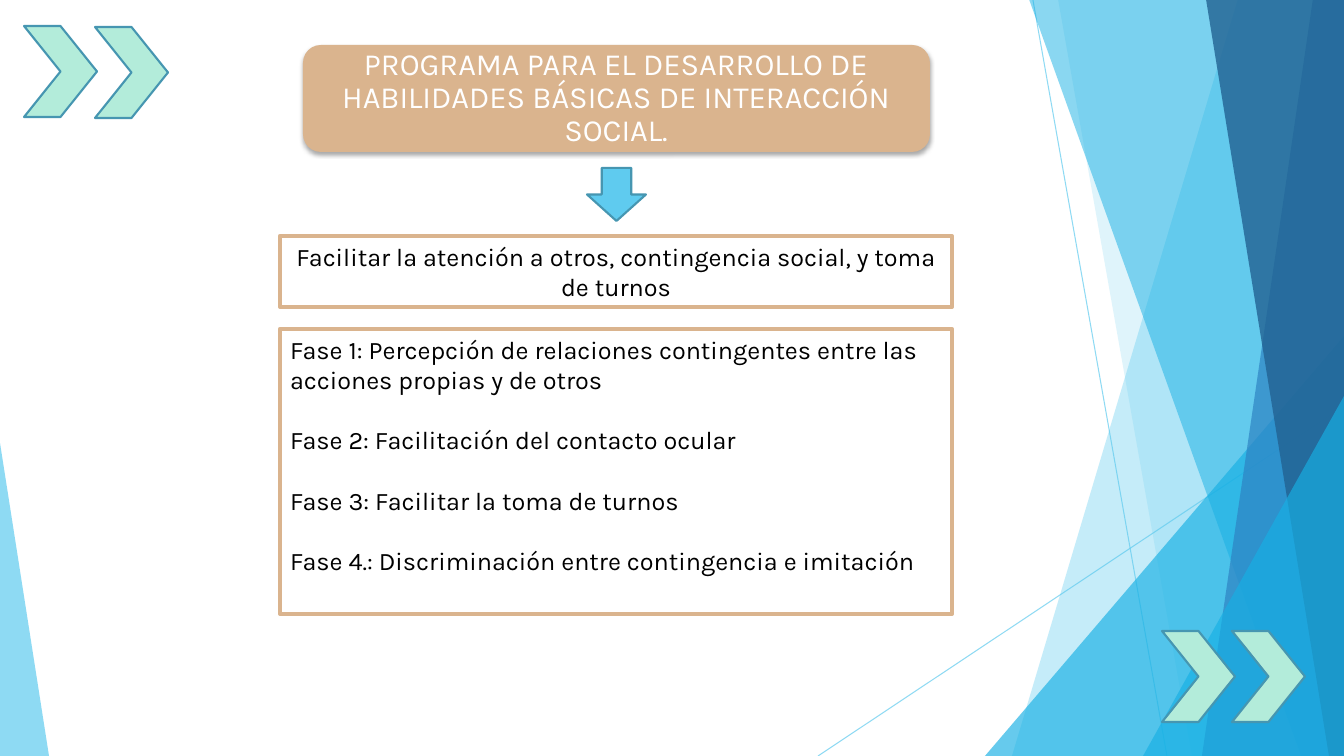
"""Build the slide on a programme for basic social interaction skills."""
from lxml import etree
from pptx import Presentation
from pptx.dml.color import RGBColor
from pptx.enum import shapes, text
from pptx.oxml import parse_xml
from pptx.oxml.ns import nsdecls, qn
from pptx.util import Pt

SCALE = 914400 / 100.8
WIDTH, HEIGHT = 1344, 756
FONT = "Karla"
COLORS = {
    "sky": "5FCBEF", "cyan": "17B0E4", "blue": "2E83C3", "navy": "226292",
    "mint": "B3ECDA", "teal": "4696B1", "sand": "DAB48E",
    "white": "FFFFFF", "black": "000000",
}


def px(*lengths):
    return [round(length * SCALE) for length in lengths]


def paint(shape, fill=None, line=None, width=1.5, alpha=100):
    shape.shadow.inherit = False
    for form, color in ((shape.fill, fill), (shape.line.fill, line)):
        if color is None:
            form.background()
        else:
            form.solid()
            form.fore_color.rgb = RGBColor.from_string(COLORS[color])
    if line:
        shape.line.width = Pt(width)
    if alpha < 100:
        color_node = shape._element.spPr.find(qn("a:solidFill"))[0]
        etree.SubElement(color_node, qn("a:alpha")).set("val", str(alpha * 1000))


deck = Presentation()
deck.slide_width, deck.slide_height = px(WIDTH, HEIGHT)
page = deck.slides.add_slide(deck.slide_layouts[1])
title, phases = page.placeholders

for ends in ((1033, 0, 1167, HEIGHT), (WIDTH, 406, 818, HEIGHT)):
    ray = page.shapes.add_connector(shapes.MSO_CONNECTOR.STRAIGHT, *px(*ends))
    ray.line.color.rgb = RGBColor.from_string(COLORS["sky"])
    ray.line.width = Pt(0.75)
    ray_color = ray.line._ln.find(qn("a:solidFill"))[0]
    etree.SubElement(ray_color, qn("a:alpha")).set("val", "70000")
    etree.SubElement(ray._element.spPr, qn("a:effectLst"))

facets = [
    ("band", (1238, 1012), "sky", 36),
    ("band", (1058, 1192), "sky", 20),
    ("triangle", (985, 336, 359, 420, 1), "cyan", 66),
    ("band", (1029, 1301), "cyan", 50),
    ("band", (1313, 1202), "blue", 70),
    ("band", (1206, 1329), "navy", 80),
    ("triangle", (1143, 396, 201, 360, 1), "cyan", 66),
    ("triangle", (0, 443, 49, 313, 0), "sky", 70),
]
for kind, place, color, alpha in facets:
    if kind == "band":
        top_x, bottom_x = place
        builder = page.shapes.build_freeform(top_x, -1, scale=SCALE)
        builder.add_line_segments([(WIDTH, -1), (WIDTH, HEIGHT), (bottom_x, HEIGHT)])
        facet = builder.convert_to_shape()
    else:
        *frame, apex = place
        facet = page.shapes.add_shape(shapes.MSO_SHAPE.ISOSCELES_TRIANGLE, *px(*frame))
        facet.adjustments[0] = apex
    paint(facet, color, alpha=alpha)

for left, top in ((1162, 631), (1232, 631), (24, 26), (95, 27)):
    chevron = page.shapes.add_shape(shapes.MSO_SHAPE.CHEVRON, *px(left, top, 73, 91))
    paint(chevron, "mint", "teal")

card = page.shapes.add_shape(shapes.MSO_SHAPE.ROUNDED_RECTANGLE, *px(303, 45, 627, 107))
paint(card, "sand")
card._element.spPr.find(qn("a:effectLst")).append(parse_xml(
    f'<a:outerShdw {nsdecls("a")} blurRad="38100" dist="25400" dir="5400000" rotWithShape="0">'
    '<a:srgbClr val="000000"><a:alpha val="35000"/></a:srgbClr></a:outerShdw>'))
card._element.addnext(title._element)

arrow = page.shapes.add_shape(shapes.MSO_SHAPE.DOWN_ARROW, *px(587, 168, 59, 53))
paint(arrow, "sky", "teal")

goal = page.shapes.add_textbox(0, 0, 0, 0)
for box in (goal, phases):
    box.fill.background()
    box.line.color.rgb = RGBColor.from_string(COLORS["sand"])
    box.line.width = Pt(3)

CENTER, LEFT = text.PP_ALIGN.CENTER, text.PP_ALIGN.LEFT
TOP, MIDDLE = text.MSO_ANCHOR.TOP, text.MSO_ANCHOR.MIDDLE
contents = [
    (title, (306, 50, 620, 97), 22, "white", CENTER, MIDDLE, (24, 0), 0.9, 0,
     ["PROGRAMA PARA EL DESARROLLO DE HABILIDADES BÁSICAS DE INTERACCIÓN SOCIAL."]),
    (goal, (280, 236, 672, 71), 18, "black", CENTER, TOP, (10, 5), 1, 0,
     ["Facilitar la atención a otros, contingencia social, y toma de turnos"]),
    (phases, (280, 329, 672, 285), 18, "black", LEFT, TOP, (10, 5), 1, 21.6,
     ["Fase 1: Percepción de relaciones contingentes entre las acciones propias y de otros",
      "Fase 2: Facilitación del contacto ocular",
      "Fase 3: Facilitar la toma de turnos",
      "Fase 4.: Discriminación entre contingencia e imitación"]),
]
for box, place, size, color, align, anchor, insets, spacing, gap, lines in contents:
    box.left, box.top, box.width, box.height = px(*place)
    frame = box.text_frame
    frame.text = "\n".join(lines)
    frame.word_wrap = True
    frame.auto_size = text.MSO_AUTO_SIZE.NONE
    frame.vertical_anchor = anchor
    frame.margin_left, frame.margin_top = px(*insets)
    frame.margin_right, frame.margin_bottom = px(*insets)
    for para in frame.paragraphs:
        para.alignment = align
        para.line_spacing = spacing
        para.space_before, para.space_after = Pt(0), Pt(gap)
        if box is phases:
            layout = para._p.get_or_add_pPr()
            layout.set("marL", "0")
            layout.set("indent", "0")
            etree.SubElement(layout, qn("a:buNone"))
        for span in para.runs:
            span.font.name = FONT
            span.font.size = Pt(size)
            span.font.color.rgb = RGBColor.from_string(COLORS[color])

deck.save("out.pptx")
